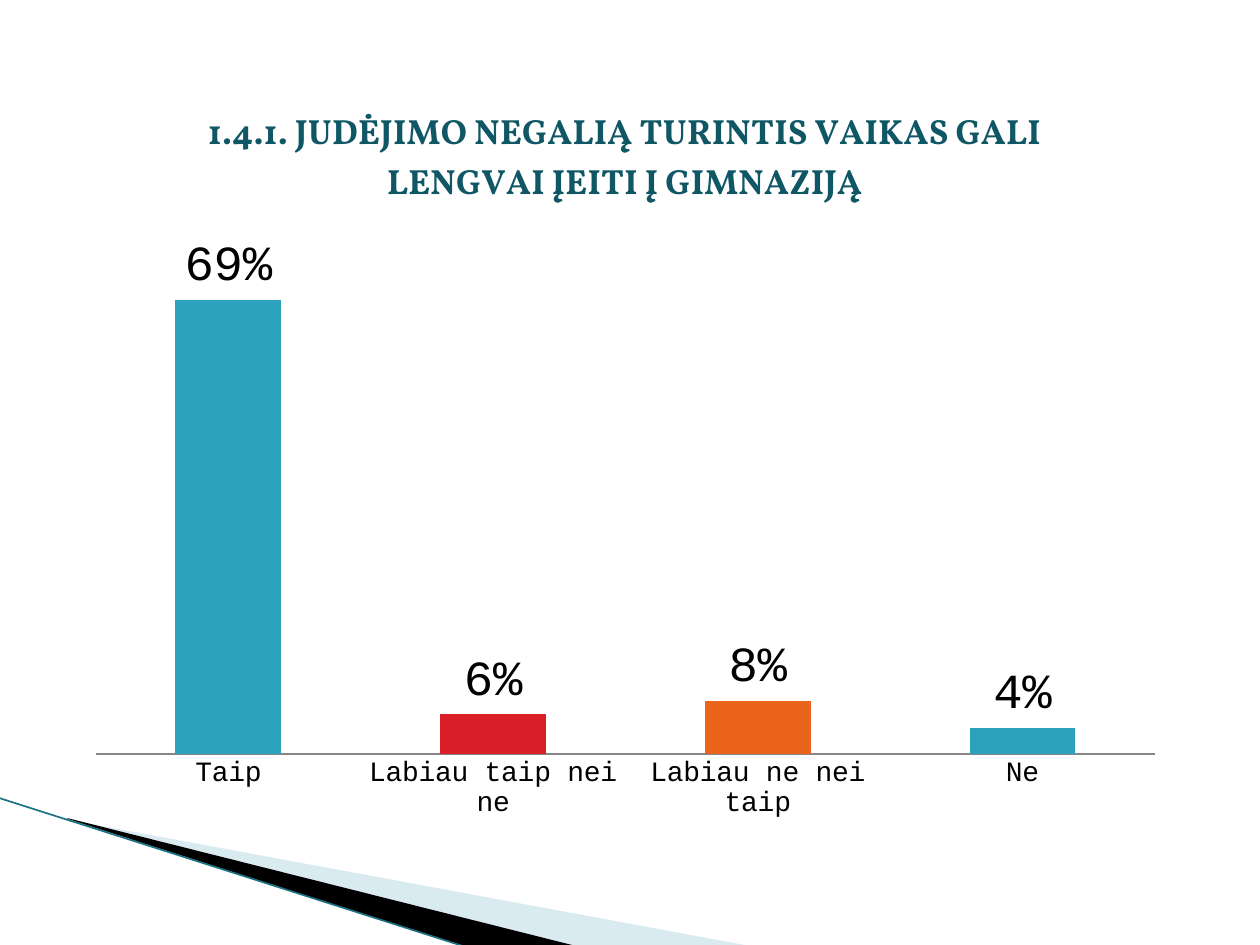
import dataclasses

import pptx
import pptx.chart.data
import pptx.dml.color
import pptx.enum.chart
import pptx.enum.shapes
import pptx.oxml
import pptx.oxml.ns
import pptx.util
from lxml import etree

PX = pptx.util.Inches(1) / 126
COLORS = {
    "pale": "A0CBDC",
    "black": "000000",
    "edge": "1B7285",
    "title": "105766",
    "axis": "868686",
    "teal": "2DA2BF",
    "red": "DA1F28",
    "orange": "EB641B",
}


@dataclasses.dataclass(frozen=True)
class Wedge:
    color: str
    points: tuple[tuple[int, int], ...]
    opacity: int = 100


@dataclasses.dataclass(frozen=True)
class Frame:
    left: int
    top: int
    width: int
    height: int


@dataclasses.dataclass(frozen=True)
class Answer:
    label: str
    share: float
    color: str


WEDGES = (
    Wedge("pale", ((69, 820), (750, 946), (575, 946), (69, 819)), 40),
    Wedge("black", ((67, 818), (576, 946), (469, 948), (68, 819))),
)
CHART = Frame(74, 78, 1102, 757)
PLOT = Frame(96, 228, 1059, 526)
TITLE = "1.4.1. JUDĖJIMO NEGALIĄ TURINTIS VAIKAS GALI LENGVAI ĮEITI Į GIMNAZIJĄ"
ANSWERS = (
    Answer("Taip", 0.69, "teal"),
    Answer("Labiau taip nei ne", 0.06, "red"),
    Answer("Labiau ne nei taip", 0.08, "orange"),
    Answer("Ne", 0.04, "teal"),
)


def emu(px: int) -> int:
    return round(px * PX)


def rgb(name: str) -> pptx.dml.color.RGBColor:
    return pptx.dml.color.RGBColor.from_string(COLORS[name])


def paint(fill, name: str) -> None:
    fill.solid()
    fill.fore_color.rgb = rgb(name)


def style_font(font, size: int, color: str = "black", face: str = "Courier New", bold: bool = False) -> None:
    font.size = pptx.util.Pt(size)
    font.name = face
    font.bold = bold
    font.color.rgb = rgb(color)


def draw_wedge(page, wedge: Wedge) -> None:
    builder = page.shapes.build_freeform(*wedge.points[0], scale=PX)
    builder.add_line_segments(wedge.points[1:], close=True)
    shape = builder.convert_to_shape()
    shape.shadow.inherit = False
    shape.line.fill.background()
    paint(shape.fill, wedge.color)
    if wedge.opacity < 100:
        color = shape.fill._xPr.find(".//" + pptx.oxml.ns.qn("a:srgbClr"))
        alpha = etree.SubElement(color, pptx.oxml.ns.qn("a:alpha"))
        alpha.set("val", str(wedge.opacity * 1000))


def draw_edge(page) -> None:
    edge = page.shapes.add_connector(
        pptx.enum.shapes.MSO_CONNECTOR.STRAIGHT, emu(-1), emu(798), emu(469), emu(948)
    )
    edge.line.width = pptx.util.Pt(0.95)
    edge.line.color.rgb = rgb("edge")
    etree.SubElement(edge._element.spPr, pptx.oxml.ns.qn("a:effectLst"))


def place_plot(chart) -> None:
    """Fix the inner plot area as fractions of the chart frame."""
    area = chart._chartSpace.chart.plotArea
    for old in area.findall(pptx.oxml.ns.qn("c:layout")):
        area.remove(old)
    layout = etree.Element(pptx.oxml.ns.qn("c:layout"))
    manual = etree.SubElement(layout, pptx.oxml.ns.qn("c:manualLayout"))
    settings = {
        "layoutTarget": "inner",
        "xMode": "edge",
        "yMode": "edge",
        "x": (PLOT.left - CHART.left) / CHART.width,
        "y": (PLOT.top - CHART.top) / CHART.height,
        "w": PLOT.width / CHART.width,
        "h": PLOT.height / CHART.height,
    }
    for tag, value in settings.items():
        etree.SubElement(manual, pptx.oxml.ns.qn(f"c:{tag}")).set("val", str(value))
    area.insert(0, layout)


def draw_chart(page) -> None:
    data = pptx.chart.data.CategoryChartData(number_format="0%")
    data.categories = [answer.label for answer in ANSWERS]
    data.add_series("Series 1", [answer.share for answer in ANSWERS])
    chart = page.shapes.add_chart(
        pptx.enum.chart.XL_CHART_TYPE.COLUMN_CLUSTERED,
        emu(CHART.left), emu(CHART.top), emu(CHART.width), emu(CHART.height), data,
    ).chart
    style_font(chart.font, 10)
    chart.has_legend = False
    place_plot(chart)

    # Title
    chart.has_title = True
    para = chart.chart_title.text_frame.paragraphs[0]
    para.text = TITLE
    style_font(para.runs[0].font, 20, "title", "Vollkorn", True)

    # Axes
    categories = chart.category_axis
    categories.major_tick_mark = pptx.enum.chart.XL_TICK_MARK.NONE
    categories.format.line.color.rgb = rgb("axis")
    categories.format.line.width = pptx.util.Pt(0.75)
    style_font(categories.tick_labels.font, 16)
    values = chart.value_axis
    values.minimum_scale = 0
    values.maximum_scale = 0.8
    values.has_major_gridlines = False
    values.visible = False

    # Columns and labels
    plot = chart.plots[0]
    plot.vary_by_categories = False
    plot.gap_width = 150
    series = plot.series[0]
    paint(series.format.fill, "teal")
    for index, answer in enumerate(ANSWERS):
        paint(series.points[index].format.fill, answer.color)
    labels = series.data_labels
    labels.show_value = True
    labels.number_format = "0%"
    labels.number_format_is_linked = False
    labels.position = pptx.enum.chart.XL_LABEL_POSITION.OUTSIDE_END
    style_font(labels.font, 28)


def main() -> None:
    deck = pptx.Presentation()
    deck.slide_width, deck.slide_height = emu(1260), emu(945)
    page = deck.slides.add_slide(deck.slide_layouts[6])

    # Corner decoration
    for wedge in WEDGES:
        draw_wedge(page, wedge)
    draw_edge(page)

    # Survey answers
    draw_chart(page)
    deck.save("out.pptx")


if __name__ == "__main__":
    main()
